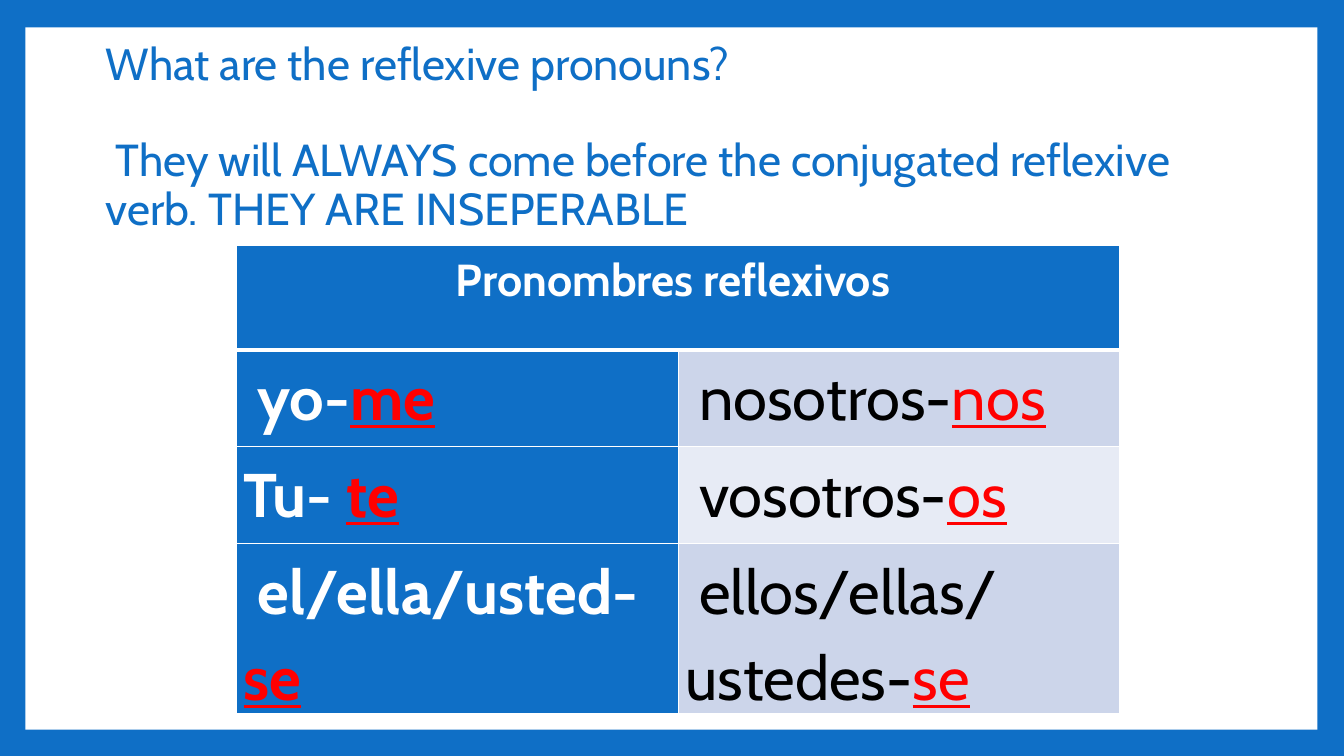
import pptx
import pptx.dml.color
import pptx.enum.shapes
import pptx.enum.text
import pptx.oxml.ns
import pptx.util
from lxml import etree

Cm = pptx.util.Cm
Pt = pptx.util.Pt
RGBColor = pptx.dml.color.RGBColor
Align = pptx.enum.text.PP_ALIGN
Anchor = pptx.enum.text.MSO_ANCHOR

BLUE = RGBColor(0x0F, 0x6F, 0xC6)
WHITE = RGBColor(0xFF, 0xFF, 0xFF)
BLACK = RGBColor(0, 0, 0)
RED = RGBColor(0xFF, 0, 0)
BAND_DARK = RGBColor(0xCC, 0xD5, 0xEA)
BAND_LIGHT = RGBColor(0xE7, 0xEB, 0xF5)

TITLE = [
    "What are the reflexive pronouns?",
    " They will ALWAYS come before the conjugated reflexive verb. THEY ARE INSEPERABLE",
]
HEADER = "Pronombres reflexivos "
PRONOUNS = [
    [(" yo-", "me"), (" nosotros-", "nos")],
    [("Tu- ", "te"), (" vosotros-", "os")],
    [(" el/ella/usted-", "se"), (" ellos/ellas/\nustedes-", "se")],
]


class SlideBuilder:
    """Holds the style and the current slide, and draws each kind of element."""

    font_name = "Cabin"
    small = Pt(32)
    large = Pt(44)

    def __init__(self, slide):
        self.slide = slide

    def background(self, color):
        fill = self.slide.background.fill
        fill.solid()
        fill.fore_color.rgb = color

    def panel(self, left, top, width, height, color):
        shape = self.slide.shapes.add_shape(
            pptx.enum.shapes.MSO_SHAPE.RECTANGLE, left, top, width, height)
        shape.shadow.inherit = False
        shape.fill.solid()
        shape.fill.fore_color.rgb = color
        shape.line.fill.background()

    def run(self, paragraph, text, size, color, bold=False, underline=False):
        for index, line in enumerate(text.split("\n")):
            if index:
                paragraph.add_line_break()
            run = paragraph.add_run()
            run.text = line
            font = run.font
            font.name, font.size, font.bold, font.underline = self.font_name, size, bold, underline
            font.color.rgb = color

    def title(self, left, top, width, height, lines):
        frame = self.slide.shapes.add_textbox(left, top, width, height).text_frame
        frame.word_wrap = True
        frame.vertical_anchor = Anchor.MIDDLE
        for index, line in enumerate(lines):
            paragraph = frame.add_paragraph() if index else frame.paragraphs[0]
            paragraph.line_spacing = 0.9
            paragraph.space_before = Pt(34.5 if index else 0)
            self.run(paragraph, line, self.small, BLUE)

    def table(self, left, top, column_widths, row_heights):
        table = self.slide.shapes.add_table(
            len(row_heights), len(column_widths), left, top,
            sum(column_widths), sum(row_heights)).table
        for column, width in zip(table.columns, column_widths):
            column.width = width
        for row, height in zip(table.rows, row_heights):
            row.height = height
        return table

    def cell(self, cell, color, top=1, bottom=1):
        properties = cell._tc.get_or_add_tcPr()
        for side, points in zip("LRTB", (1, 1, top, bottom)):
            line = etree.SubElement(properties, pptx.oxml.ns.qn(f"a:ln{side}"), w=str(Pt(points)))
            fill = etree.SubElement(line, pptx.oxml.ns.qn("a:solidFill"))
            etree.SubElement(fill, pptx.oxml.ns.qn("a:srgbClr"), val=str(WHITE))
        cell.fill.solid()
        cell.fill.fore_color.rgb = color
        cell.margin_left = cell.margin_right = Cm(0.18)
        cell.margin_top = cell.margin_bottom = 0
        paragraph = cell.text_frame.paragraphs[0]
        paragraph.line_spacing = 1.15
        paragraph.space_after = Pt(10)
        return paragraph

    def pronoun_table(self, left, top):
        table = self.table(left, top, [Cm(11.13)] * 2, [Cm(2.64)] + [Cm(2.44)] * len(PRONOUNS))
        table.cell(0, 0).merge(table.cell(0, 1))
        for column in (1, 0):
            paragraph = self.cell(table.cell(0, column), BLUE, bottom=3)
        paragraph.alignment = Align.CENTER
        self.run(paragraph, HEADER, self.small, WHITE, bold=True)
        for row, pair in enumerate(PRONOUNS, start=1):
            band = BAND_DARK if row % 2 else BAND_LIGHT
            for column, (subject, pronoun) in enumerate(pair):
                singular = column == 0
                paragraph = self.cell(table.cell(row, column), BLUE if singular else band,
                                      top=3 if row == 1 else 1)
                self.run(paragraph, subject, self.large, WHITE if singular else BLACK, singular)
                self.run(paragraph, pronoun, self.large, RED, singular, underline=True)


def main():
    presentation = pptx.Presentation()
    presentation.slide_width = Cm(33.87)
    presentation.slide_height = Cm(19.05)
    builder = SlideBuilder(presentation.slides.add_slide(presentation.slide_layouts[6]))
    builder.background(BLUE)
    builder.panel(Cm(0.64), Cm(0.69), Cm(32.56), Cm(17.7), WHITE)
    builder.title(Cm(2.41), Cm(1.6), Cm(27.43), Cm(3.76), TITLE)
    builder.pronoun_table(Cm(5.96), Cm(6.18))
    presentation.save("out.pptx")


if __name__ == "__main__":
    main()
